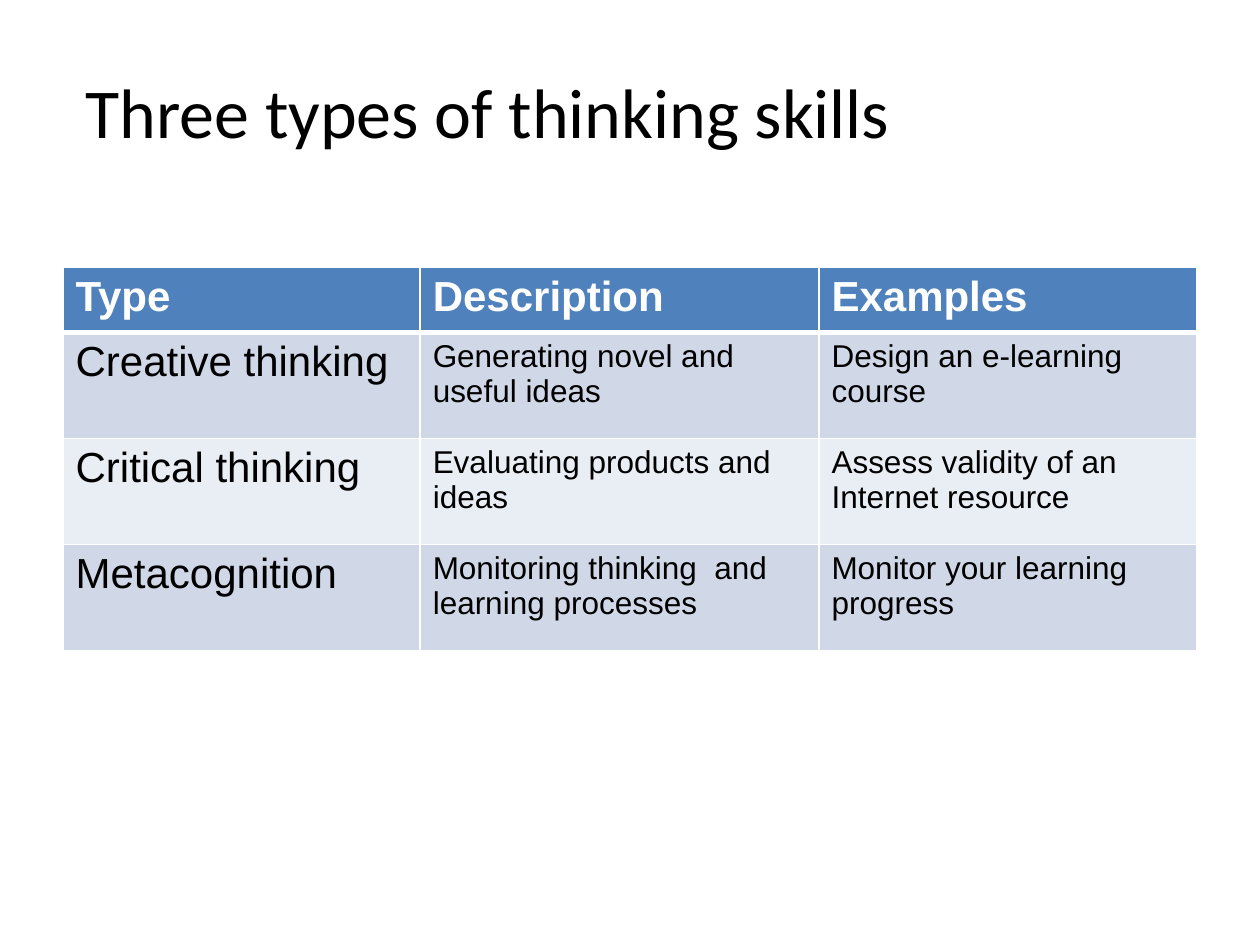
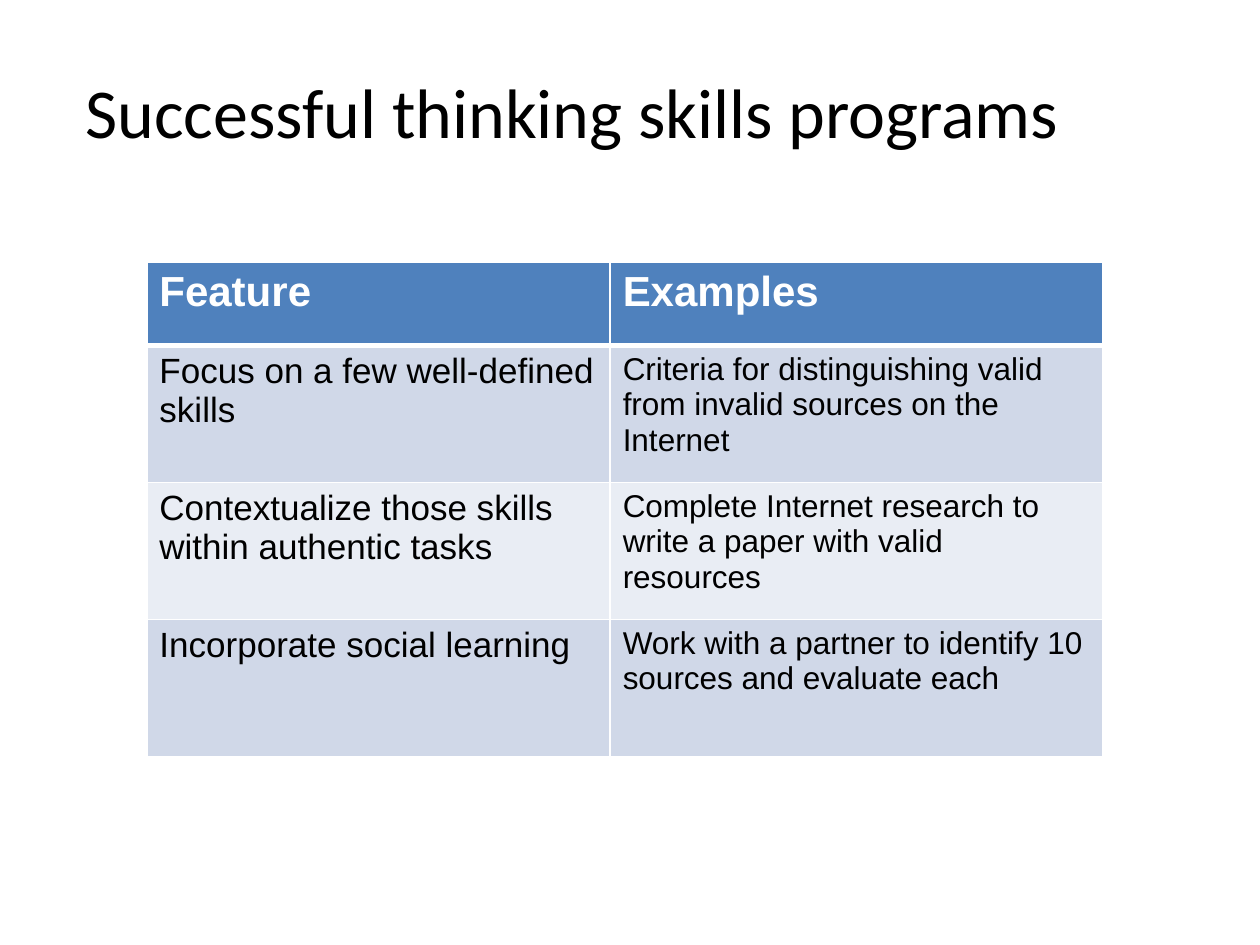
from dataclasses import dataclass

import pptx
import pptx.dml.color
import pptx.enum.text
import pptx.oxml
import pptx.oxml.ns
import pptx.util

Cm = pptx.util.Cm
Pt = pptx.util.Pt


@dataclass(frozen=True)
class Theme:
    title_font: str = "Calibri"
    table_font: str = "Arial"
    ink: str = "000000"
    paper: str = "FFFFFF"
    header: str = "4F81BD"
    bands: tuple[str, str] = ("D0D8E8", "E9EDF4")
    title_size: int = 40
    header_size: int = 24
    detail_size: int = 18
    rule: int = 1
    header_rule: int = 3


@dataclass(frozen=True)
class TableSlide:
    """One titled table; lengths are in centimetres."""
    title: str
    left: float
    top: float
    col_widths: tuple[float, ...]
    header_height: float
    row_height: float
    label_size: int
    rows: tuple[tuple[str, ...], ...]


THEME = Theme()

SLIDES = (
    TableSlide(
        title="Three types of thinking skills",
        left=1.27, top=5.38, col_widths=(7.2, 8.04, 7.62),
        header_height=1.32, row_height=2.14, label_size=24,
        rows=(
            ("Type", "Description", "Examples"),
            ("Creative thinking", "Generating novel and useful ideas",
             "Design an e-learning course"),
            ("Critical thinking", "Evaluating products and ideas",
             "Assess validity of an Internet resource"),
            ("Metacognition", "Monitoring thinking  and learning processes",
             "Monitor your learning progress"),
        ),
    ),
    TableSlide(
        title="Successful thinking skills programs",
        left=2.96, top=5.29, col_widths=(9.34, 9.92),
        header_height=1.68, row_height=2.76, label_size=20,
        rows=(
            ("Feature", "Examples"),
            ("Focus on a few well-defined skills",
             "Criteria for distinguishing valid from invalid sources on the Internet"),
            ("Contextualize those skills within authentic tasks",
             "Complete Internet research to write a paper with valid resources"),
            ("Incorporate social learning",
             "Work with a partner to identify 10 sources and evaluate each"),
        ),
    ),
)


def rgb(color: str) -> pptx.dml.color.RGBColor:
    return pptx.dml.color.RGBColor.from_string(color)


def add_run(p, text: str, font: str, size: int, color: str, bold: bool = False) -> None:
    r = p.add_run()
    r.text = text
    r.font.name = font
    r.font.size = Pt(size)
    r.font.bold = bold
    r.font.color.rgb = rgb(color)


def set_title(slide, text: str) -> None:
    sp = slide.shapes.title
    sp.left, sp.top, sp.width, sp.height = Cm(1.47), Cm(0.64), Cm(22.86), Cm(3.18)
    tf = sp.text_frame
    tf.word_wrap = True
    tf.vertical_anchor = pptx.enum.text.MSO_ANCHOR.MIDDLE
    p = tf.paragraphs[0]
    p.alignment = pptx.enum.text.PP_ALIGN.LEFT
    add_run(p, text, THEME.title_font, THEME.title_size, THEME.ink)


def set_borders(cell, top: int, bottom: int) -> None:
    """Put the four edge lines ahead of the cell fill, as the schema orders them."""
    widths = {"lnL": THEME.rule, "lnR": THEME.rule, "lnT": top, "lnB": bottom}
    tc_pr = cell._tc.get_or_add_tcPr()
    for i, (edge, width) in enumerate(widths.items()):
        tc_pr.insert(i, pptx.oxml.parse_xml(
            f'<a:{edge} {pptx.oxml.ns.nsdecls("a")} w="{Pt(width)}"><a:solidFill>'
            f'<a:srgbClr val="{THEME.paper}"/></a:solidFill></a:{edge}>'))


def style_cell(cell, text: str, row: int, col: int, label_size: int) -> None:
    is_header = row == 0
    if is_header:
        fill, color, size = THEME.header, THEME.paper, THEME.header_size
    else:
        fill, color = THEME.bands[(row - 1) % 2], THEME.ink
        size = label_size if col == 0 else THEME.detail_size
    cell.fill.solid()
    cell.fill.fore_color.rgb = rgb(fill)
    set_borders(cell,
                top=THEME.header_rule if row == 1 else THEME.rule,
                bottom=THEME.header_rule if is_header else THEME.rule)
    add_run(cell.text_frame.paragraphs[0], text, THEME.table_font, size, color, is_header)


def add_skill_table(slide, spec: TableSlide) -> None:
    heights = [spec.header_height] + [spec.row_height] * (len(spec.rows) - 1)
    table = slide.shapes.add_table(
        len(heights), len(spec.col_widths), Cm(spec.left), Cm(spec.top),
        Cm(sum(spec.col_widths)), Cm(sum(heights))).table
    table.horz_banding = False
    for column, width in zip(table.columns, spec.col_widths):
        column.width = Cm(width)
    for i, (height, texts) in enumerate(zip(heights, spec.rows)):
        table.rows[i].height = Cm(height)
        for j, text in enumerate(texts):
            style_cell(table.cell(i, j), text, i, j, spec.label_size)


def main() -> None:
    prs = pptx.Presentation()
    prs.slide_width, prs.slide_height = Cm(25.4), Cm(19.05)
    title_only = prs.slide_layouts.get_by_name("Title Only")
    for spec in SLIDES:
        slide = prs.slides.add_slide(title_only)
        set_title(slide, spec.title)
        add_skill_table(slide, spec)
    prs.save("out.pptx")


if __name__ == "__main__":
    main()
